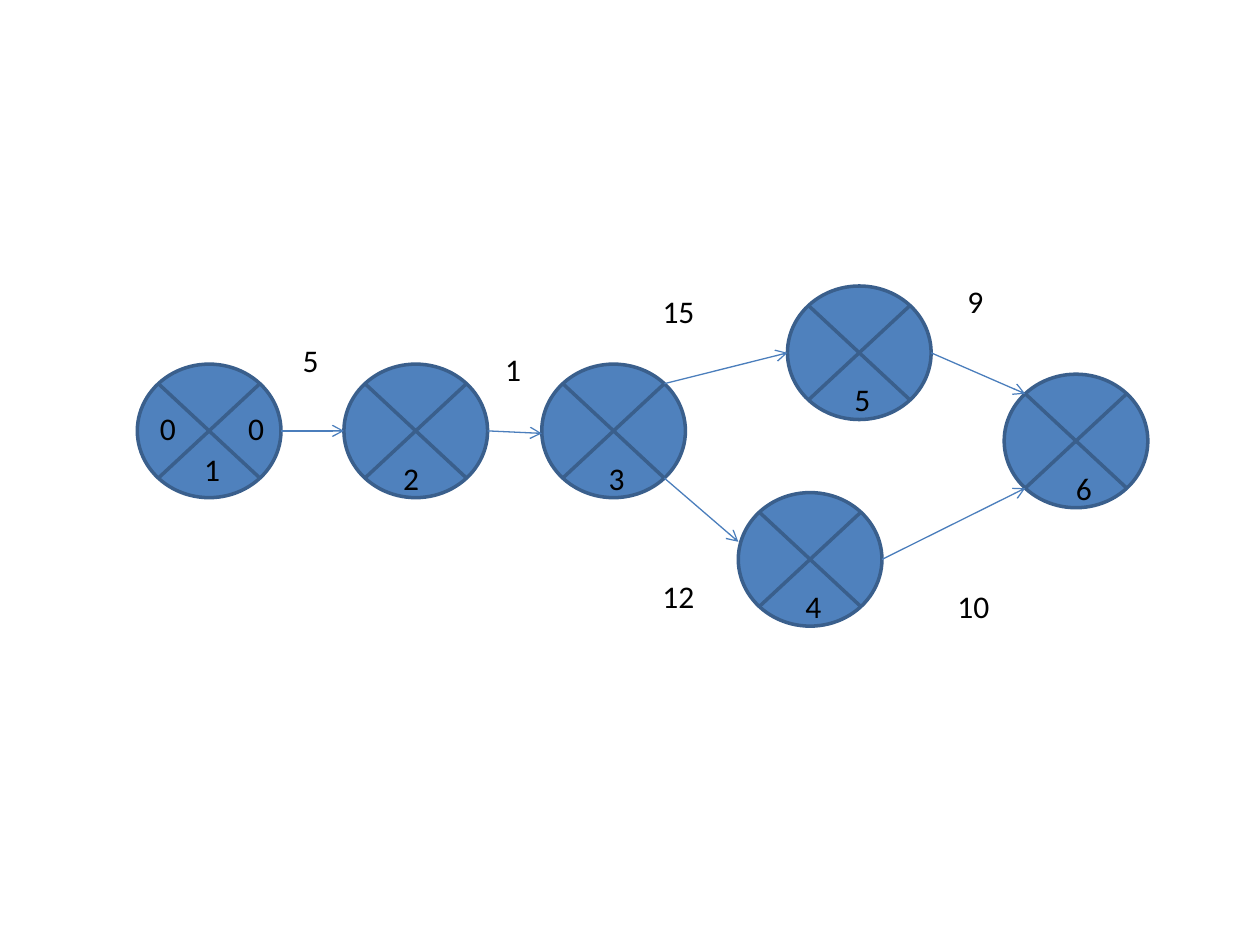
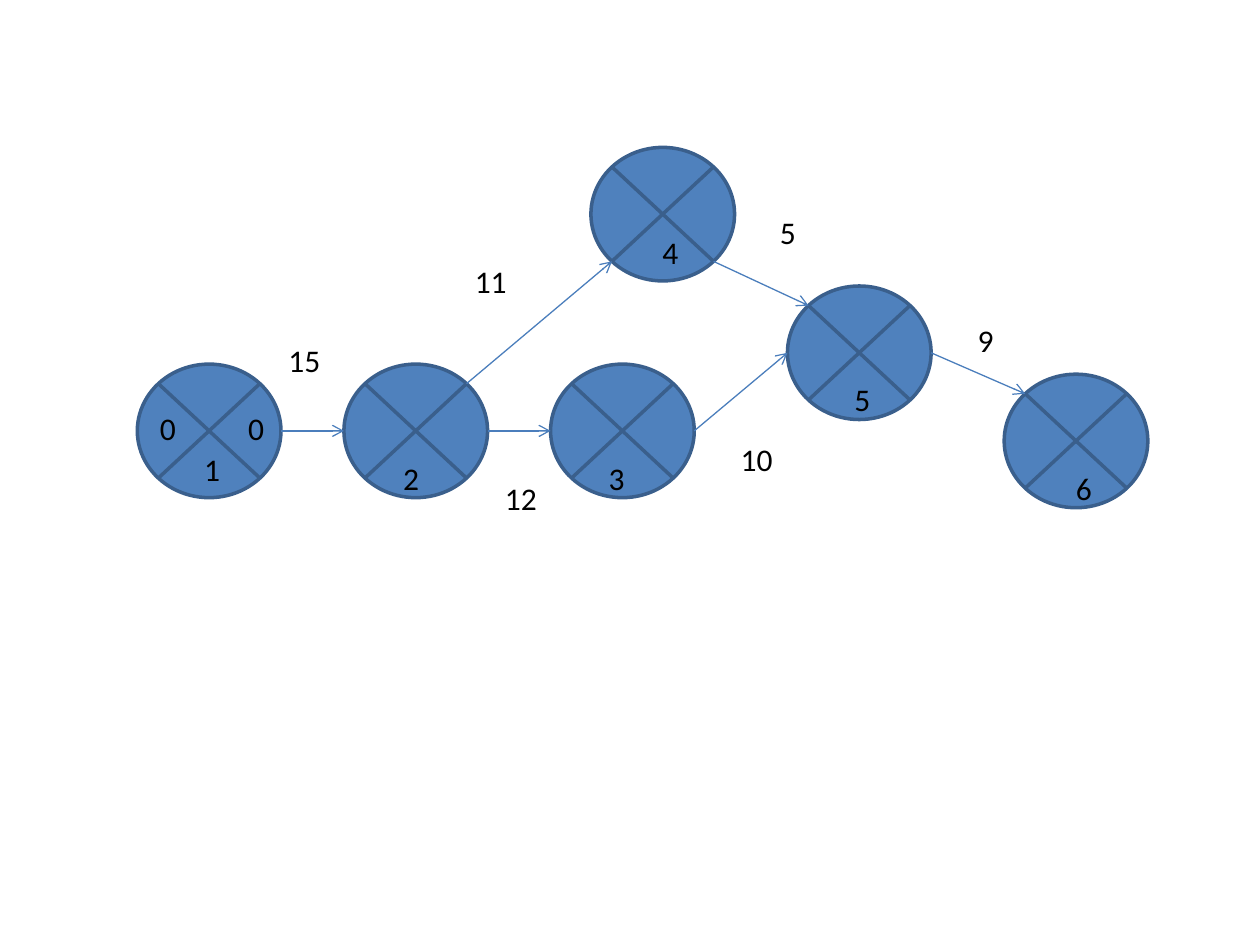
"""Build two activity network diagrams with numbered event nodes."""
from dataclasses import dataclass
from math import sqrt

from lxml import etree
from pptx import Presentation
from pptx.dml.color import RGBColor
from pptx.enum.shapes import MSO_CONNECTOR, MSO_SHAPE
from pptx.enum.text import MSO_AUTO_SIZE
from pptx.oxml.ns import qn
from pptx.util import Emu, Pt

PX = 9144
JUNCTION = MSO_SHAPE.FLOWCHART_SUMMING_JUNCTION
STRAIGHT = MSO_CONNECTOR.STRAIGHT
GROW = MSO_AUTO_SIZE.SHAPE_TO_FIT_TEXT
BLANK = 6
NODE_W, NODE_H, LABEL_H = 114, 106, 40
DIAG = 1 / sqrt(2)
SITES = {
    "left": (2, -1, 0), "right": (6, 1, 0),
    "top left": (1, -DIAG, -DIAG), "bottom left": (3, -DIAG, DIAG),
    "bottom right": (5, DIAG, DIAG), "top right": (7, DIAG, -DIAG),
}


@dataclass(frozen=True)
class Theme:
    """Colours, type and line widths of the diagrams."""
    node: RGBColor = RGBColor(0x4F, 0x81, 0xBD)
    outline: RGBColor = RGBColor(0x3A, 0x5F, 0x8C)
    arrow: RGBColor = RGBColor(0x4B, 0x7E, 0xBC)
    text: RGBColor = RGBColor(0, 0, 0)
    font: str = "Calibri"
    size: Pt = Pt(18)
    outline_w: Pt = Pt(2)
    arrow_w: Pt = Pt(0.75)


class Network:
    """Draws nodes, arrows and labels on the current slide."""

    def __init__(self, prs, theme):
        """Keep the presentation and its style."""
        self.prs, self.theme = prs, theme

    def new_slide(self):
        """Start an empty slide."""
        self.s = self.prs.slides.add_slide(self.prs.slide_layouts[BLANK])
        self.nodes = {}

    def node(self, number, x, y):
        """Add a crossed event circle."""
        sp = self.s.shapes.add_shape(JUNCTION, *px(x, y, NODE_W, NODE_H))
        sp.shadow.inherit = False
        sp.fill.solid()
        sp.fill.fore_color.rgb = self.theme.node
        sp.line.color.rgb = self.theme.outline
        sp.line.width = self.theme.outline_w
        self.nodes[number] = sp

    def end(self, number, site):
        """Return the point of a connection site on a node."""
        sp = self.nodes[number]
        _, dx, dy = SITES[site]
        return (Emu(round(sp.left + sp.width * (1 + dx) / 2)),
                Emu(round(sp.top + sp.height * (1 + dy) / 2)))

    def arrow(self, start, start_site, stop, stop_site, drop=0):
        """Join two nodes; a dropped arrow tip is left unattached."""
        x, y = self.end(stop, stop_site)
        c = self.s.shapes.add_connector(
            STRAIGHT, *self.end(start, start_site), x, y + drop * PX)
        c.line.color.rgb = self.theme.arrow
        c.line.width = self.theme.arrow_w
        sppr = c._element.spPr
        etree.SubElement(sppr.find(qn("a:ln")), qn("a:tailEnd"), type="arrow")
        etree.SubElement(sppr, qn("a:effectLst"))
        joints = [("a:stCxn", start, start_site)]
        if not drop:
            joints.append(("a:endCxn", stop, stop_site))
        props = c._element.find(".//" + qn("p:cNvCxnSpPr"))
        for tag, number, site in joints:
            etree.SubElement(props, qn(tag), idx=str(SITES[site][0]),
                             id=str(self.nodes[number].shape_id))

    def label(self, text, x, y, w, wrap=True):
        """Add a number beside an arrow or inside a node."""
        tf = self.s.shapes.add_textbox(*px(x, y, w, LABEL_H)).text_frame
        tf.word_wrap = wrap
        tf.auto_size = GROW
        tf.text = text
        f = tf.paragraphs[0].runs[0].font
        f.name, f.size = self.theme.font, self.theme.size
        f.color.rgb = self.theme.text

    def diagram(self, nodes, arrows, labels):
        """Draw a whole network, adding the parts every slide shares."""
        self.new_slide()
        for number, place in (SHARED_NODES | nodes).items():
            self.node(number, *place)
        for arrow in SHARED_ARROWS + arrows:
            self.arrow(*arrow)
        for label in SHARED_LABELS + labels:
            self.label(*label)


def px(*lengths):
    """Turn px into EMU."""
    return [Emu(n * PX) for n in lengths]


SHARED_NODES = {1: (109, 289), 2: (273, 289), 5: (625, 227), 6: (797, 297)}
SHARED_ARROWS = [(1, "right", 2, "left"), (5, "right", 6, "top left")]
SHARED_LABELS = [
    ("0", 117, 320, 23), ("0", 187, 320, 31), ("1", 156, 352, 16),
    ("2", 320, 359, 8), ("3", 477, 359, 16), ("5", 672, 297, 16),
    ("6", 844, 367, 34),
]


def main():
    """Build and save both diagrams."""
    prs = Presentation()
    prs.slide_width, prs.slide_height = px(1000, 750)
    net = Network(prs, Theme())
    net.diagram(
        {3: (430, 289), 4: (586, 391)},
        [(2, "right", 3, "left", 2), (3, "top right", 5, "left"),
         (3, "bottom right", 4, "left", -14),
         (4, "right", 6, "bottom left")],
        [("4", 633, 461, 16), ("5", 234, 266, 16), ("1", 391, 273, 31),
         ("15", 516, 227, 55), ("12", 516, 453, 46, False),
         ("9", 758, 219, 31), ("10", 750, 461, 78)])
    net.diagram(
        {3: (437, 289), 4: (469, 117)},
        [(2, "top right", 4, "bottom left"),
         (4, "bottom right", 5, "top left"),
         (2, "right", 3, "left"), (3, "right", 5, "left")],
        [("4", 516, 180, 36), ("15", 219, 266, 55),
         ("12", 391, 375, 46, False), ("9", 766, 250, 31),
         ("10", 578, 344, 78), ("11", 367, 203, 47), ("5", 609, 164, 31)])
    prs.save("out.pptx")


if __name__ == "__main__":
    main()
